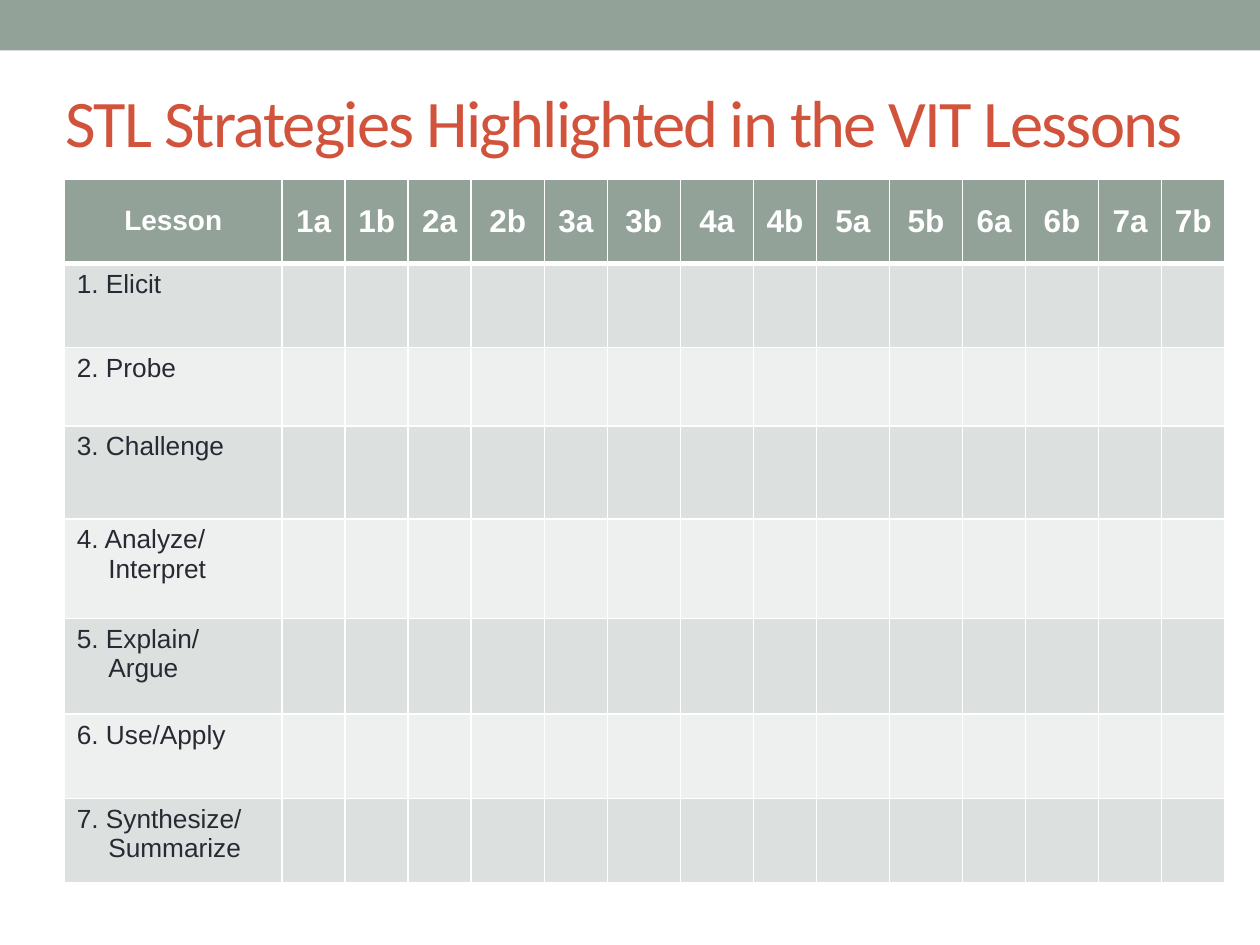
from dataclasses import dataclass

from lxml.etree import SubElement
from pptx import Presentation
from pptx.dml.color import RGBColor as RGB
from pptx.enum.shapes import MSO_SHAPE as SHAPE
from pptx.enum.text import MSO_ANCHOR as ANCHOR, PP_ALIGN as ALIGN
from pptx.oxml.ns import qn
from pptx.util import Inches, Pt


@dataclass(frozen=True)
class Theme:
    sage: str = "93A299"
    title: str = "D2533C"
    ink: str = "292934"
    white: str = "FFFFFF"
    bands: tuple = ("DCE0DE", "EEF0EF")
    title_font: str = "Calibri"
    table_font: str = "Arial"
    title_size: int = 38
    corner_size: int = 16
    lesson_size: int = 18
    strategy_size: int = 15


T = Theme()


def add_run(p, text, font, size, color, bold=False):
    r = p.add_run()
    r.text = text
    r.font.name, r.font.size, r.font.bold = font, Pt(size), bold
    r.font.color.rgb = RGB.from_string(color)
    return r


def style_cell(cell, fill, top=1, bottom=1):
    """Give a cell white borders (widths in points) and a solid fill."""
    tc_pr = cell._tc.get_or_add_tcPr()
    for side, width in (("L", 1), ("R", 1), ("T", top), ("B", bottom)):
        ln = SubElement(tc_pr, qn(f"a:ln{side}"), w=str(Pt(width)))
        SubElement(SubElement(ln, qn("a:solidFill")), qn("a:srgbClr"), val=T.white)
    cell.fill.solid()
    cell.fill.fore_color.rgb = RGB.from_string(fill)


prs = Presentation()
prs.slide_width, prs.slide_height = Inches(10), Inches(7.5)
s = prs.slides.add_slide(prs.slide_layouts[6])

# Top band
band = s.shapes.add_shape(SHAPE.RECTANGLE, 0, 0, prs.slide_width, Inches(0.4))
band.shadow.inherit = False
band.fill.solid()
band.fill.fore_color.rgb = RGB.from_string(T.sage)
band.line.fill.background()

# Title
tf = s.shapes.add_textbox(Inches(0.42), Inches(0.42), Inches(9.33), Inches(1.08)).text_frame
tf.word_wrap = True
tf.vertical_anchor = ANCHOR.MIDDLE
r = add_run(tf.paragraphs[0], "STL Strategies Highlighted in the VIT Lessons",
            T.title_font, T.title_size, T.title)
r._r.get_or_add_rPr().set("spc", "-100")

# Strategy-by-lesson table
lessons = [f"{number}{part}" for number in range(1, 8) for part in "ab"]
wide_lessons = {"2b", "3b", "4a", "5a", "5b", "6b"}
strategies = ["Elicit", "Probe", "Challenge", "Analyze/ Interpret",
              "Explain/ Argue", "Use/Apply", "Synthesize/\vSummarize"]
col_widths = [1.73] + [0.58 if name in wide_lessons else 0.5 for name in lessons]
row_heights = [0.67, 0.67, 0.62, 0.74, 0.79, 0.76, 0.67, 0.67]

table = s.shapes.add_table(len(row_heights), len(col_widths), Inches(0.51), Inches(1.42),
                           Inches(sum(col_widths)), Inches(sum(row_heights))).table
for column, width in zip(table.columns, col_widths):
    column.width = Inches(width)
for row, height in zip(table.rows, row_heights):
    row.height = Inches(height)

for col, name in enumerate(["Lesson"] + lessons):
    cell = table.cell(0, col)
    style_cell(cell, T.sage, bottom=3)
    cell.vertical_anchor = ANCHOR.MIDDLE
    p = cell.text_frame.paragraphs[0]
    p.alignment = ALIGN.CENTER
    add_run(p, name, T.table_font, T.lesson_size if col else T.corner_size, T.white, bold=True)

for row, strategy in enumerate(strategies, 1):
    for col in range(len(col_widths)):
        style_cell(table.cell(row, col), T.bands[(row - 1) % 2], top=3 if row == 1 else 1)
    p = table.cell(row, 0).text_frame.paragraphs[0]
    p.space_after = Pt(12)
    p_pr = p._p.get_or_add_pPr()
    p_pr.set("marL", str(Inches(0.25)))
    p_pr.set("indent", str(-Inches(0.25)))
    for i, line in enumerate(f"{row}. {strategy}".split("\v")):
        if i:
            p.add_line_break()
        add_run(p, line, T.table_font, T.strategy_size, T.ink)

prs.save("out.pptx")
